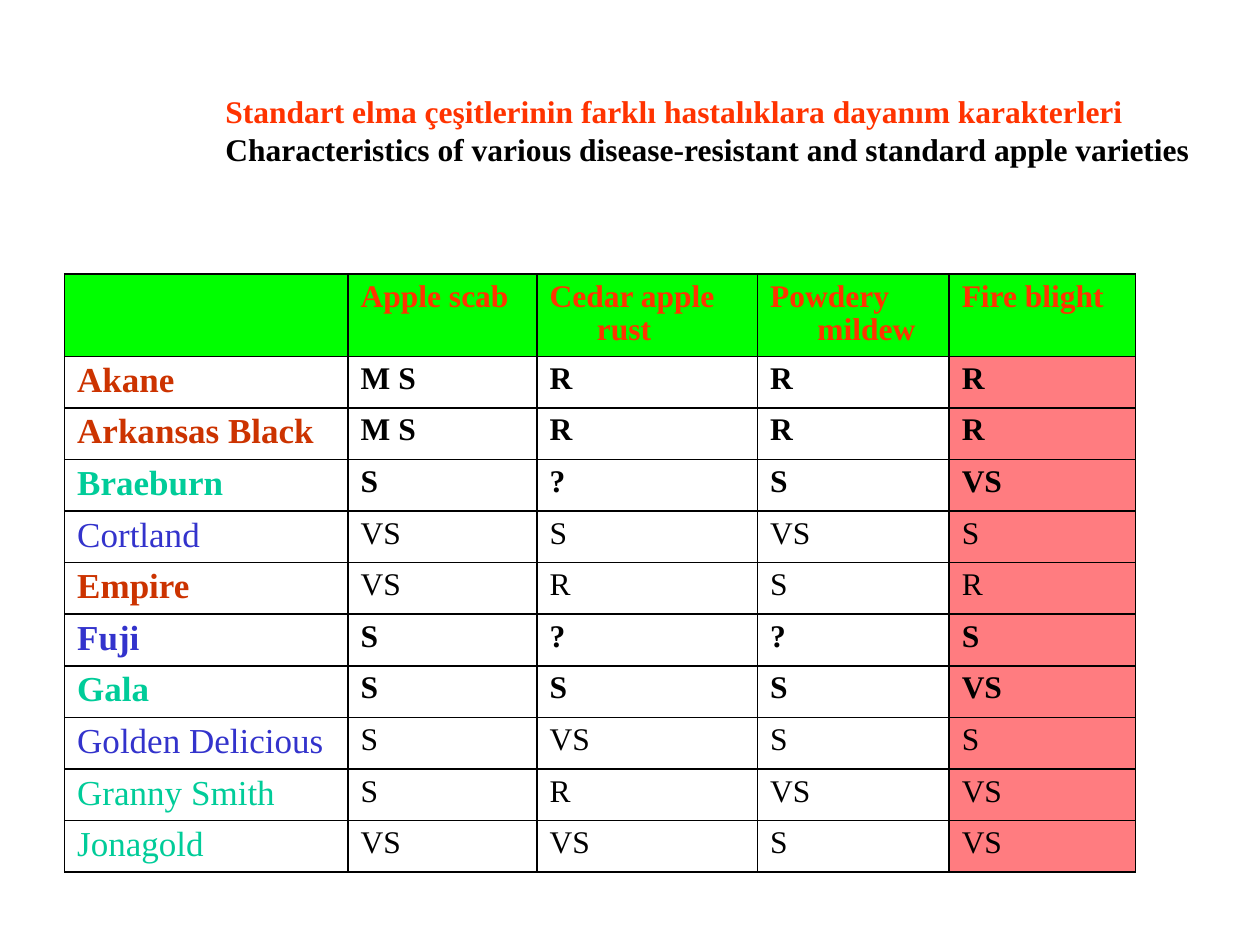
import pptx
import pptx.dml.color
import pptx.oxml
import pptx.util
from pptx.util import Pt

FONT = "Times New Roman"
BLACK, ORANGE, GREEN, PINK = "000000", "FF3300", "00FF00", "FF7C80"
RUST, TEAL, BLUE = "CC3300", "00CC99", "3333CC"

HEADINGS = ["", "Apple scab", "Cedar apple rust", "Powdery mildew", "Fire blight"]
VARIETIES = [
    ("Akane", RUST, True, True, "M S", "R", "R", "R"),
    ("Arkansas Black", RUST, True, True, "M S", "R", "R", "R"),
    ("Braeburn", TEAL, True, True, "S", "?", "S", "VS"),
    ("Cortland", BLUE, False, False, "VS", "S", "VS", "S"),
    ("Empire", RUST, True, False, "VS", "R", "S", "R"),
    ("Fuji", BLUE, True, True, "S", "?", "?", "S"),
    ("Gala", TEAL, True, True, "S", "S", "S", "VS"),
    ("Golden Delicious", BLUE, False, False, "S", "VS", "S", "S"),
    ("Granny Smith", TEAL, False, False, "S", "R", "VS", "VS"),
    ("Jonagold", TEAL, False, False, "VS", "VS", "S", "VS"),
]
COLUMN_WIDTHS = [162, 108, 126, 109.5, 106.5]
HEADER_HEIGHT, ROW_HEIGHT = 46.9, 29.5


def rgb(color):
    return pptx.dml.color.RGBColor.from_string(color)


def write(paragraph, text, size=18, color=BLACK, bold=True, spacing=None, hanging=0):
    paragraph.line_spacing = spacing
    if hanging:
        properties = paragraph._p.get_or_add_pPr()
        properties.set("marL", str(Pt(hanging)))
        properties.set("indent", str(-Pt(hanging)))
    paragraph.font.size = Pt(size)
    if text:
        run = paragraph.add_run()
        run.text = text
        run.font.name = FONT
        run.font.size = Pt(size)
        run.font.bold = bold
        run.font.color.rgb = rgb(color)


def add_borders(cell):
    properties = cell._tc.get_or_add_tcPr()
    for position, side in enumerate(("lnL", "lnR", "lnT", "lnB")):
        border = pptx.oxml.parse_xml(
            f'<a:{side} xmlns:a="http://schemas.openxmlformats.org/drawingml/2006/main" '
            f'w="{Pt(1)}"><a:solidFill><a:srgbClr val="{BLACK}"/></a:solidFill></a:{side}>'
        )
        properties.insert(position, border)


def fill_cell(cell, text, fill=None, **text_format):
    if fill:
        cell.fill.solid()
        cell.fill.fore_color.rgb = rgb(fill)
    else:
        cell.fill.background()
    add_borders(cell)
    write(cell.text_frame.paragraphs[0], text, spacing=0.96, hanging=27, **text_format)


def add_title(slide, left, top, width, height):
    box = slide.shapes.add_textbox(Pt(left), Pt(top), Pt(width), Pt(height))
    frame = box.text_frame
    frame.word_wrap = True
    write(
        frame.paragraphs[0],
        "Standart elma çeşitlerinin farklı hastalıklara dayanım karakterleri",
        color=ORANGE,
    )
    write(
        frame.add_paragraph(),
        "Characteristics of various disease-resistant and standard apple varieties",
    )


def add_resistance_table(slide, left, top):
    height = HEADER_HEIGHT + ROW_HEIGHT * len(VARIETIES)
    table = slide.shapes.add_table(
        len(VARIETIES) + 1, len(HEADINGS),
        Pt(left), Pt(top), Pt(sum(COLUMN_WIDTHS)), Pt(height),
    ).table
    table.first_row = table.horz_banding = False
    for column, width in zip(table.columns, COLUMN_WIDTHS):
        column.width = Pt(width)
    for index, row in enumerate(table.rows):
        row.height = Pt(ROW_HEIGHT if index else HEADER_HEIGHT)

    for column, heading in enumerate(HEADINGS):
        fill_cell(table.cell(0, column), heading, fill=GREEN, color=ORANGE)
    last_column = len(HEADINGS) - 1
    for row, (name, color, name_bold, bold, *ratings) in enumerate(VARIETIES, 1):
        fill_cell(table.cell(row, 0), name, size=20, color=color, bold=name_bold)
        for column, rating in enumerate(ratings, 1):
            fill = PINK if column == last_column else None
            fill_cell(table.cell(row, column), rating, fill=fill, bold=bold)


def main():
    presentation = pptx.Presentation()
    presentation.slide_width, presentation.slide_height = Pt(720), Pt(540)
    slide = presentation.slides.add_slide(presentation.slide_layouts[6])
    add_resistance_table(slide, 36.9, 156.7)
    add_title(slide, 121.7, 49, 598.3, 50.4)
    presentation.save("out.pptx")


if __name__ == "__main__":
    main()
